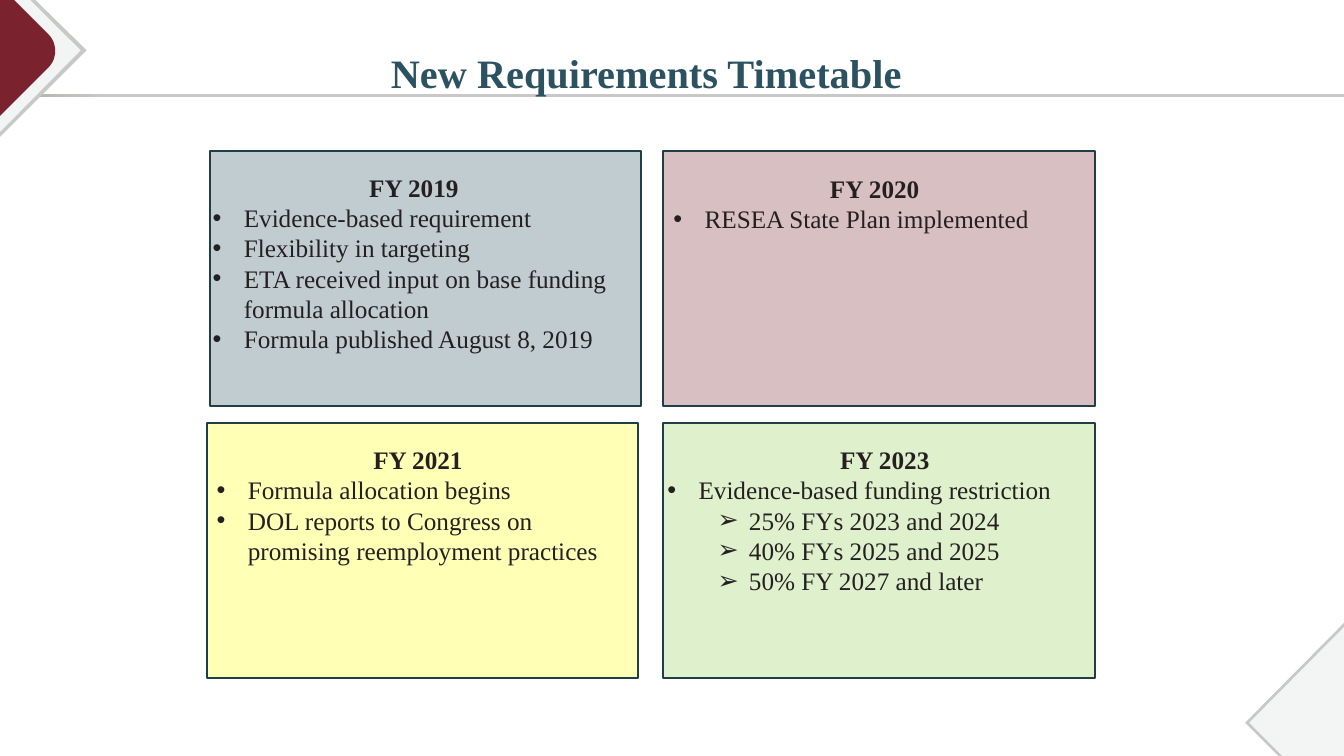
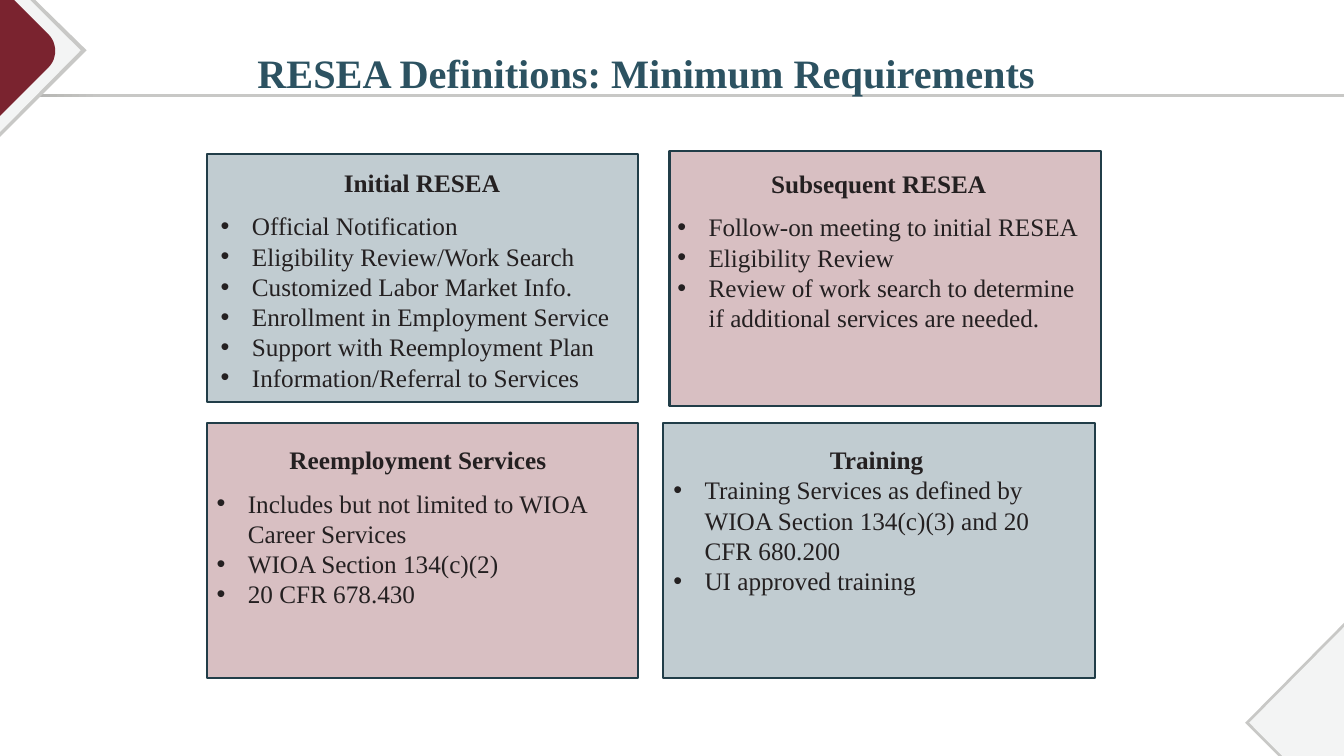
"""Build two slides of four cards each on a shared frame."""
from dataclasses import dataclass

from lxml.etree import SubElement
from pptx import Presentation
from pptx.dml.color import RGBColor
from pptx.enum.shapes import MSO_SHAPE
from pptx.enum.text import MSO_ANCHOR, PP_ALIGN
from pptx.oxml.ns import qn
from pptx.util import Inches, Pt


@dataclass(frozen=True)
class Theme:
    font: str = "Times New Roman"
    teal: str = "2C5261"
    wine: str = "7A232F"
    yellow: str = "FFFF00"
    green: str = "92D050"
    edge: str = "213D48"
    ink: str = "242021"
    grey: str = "C8C8C6"
    dark: str = "ABABA8"
    pale: str = "F3F4F4"
    head: float = 28.8
    body: float = 18
    gap: float = 9.5
    rule: float = 1.5
    tint: int = 29


@dataclass(frozen=True)
class Card:
    hue: str
    head: str
    items: tuple
    text: tuple
    shift: tuple = (0, 0)
    high: float = 2.53
    wide: float = 4.19
    gap: float = 0


LOOK = Theme()
WIDE, HIGH = 13.33, 7.5
COLS, ROWS = (2.05, 6.58), (1.5, 4.2)
CARD = 4.28
HANG = 0.31


def curve(a, b, c, d, steps=12):
    return [tuple((1 - t) ** 3 * p + 3 * (1 - t) ** 2 * t * q
                  + 3 * (1 - t) * t * t * r + t ** 3 * s
                  for p, q, r, s in zip(a, b, c, d))
            for t in (i / steps for i in range(steps + 1))]


PLATES = (
    (LOOK.grey, [(WIDE, 6.18), (WIDE, HIGH), (12.68, HIGH), (12.35, 7.17)]),
    (LOOK.pale, [(WIDE, 6.22), (WIDE, HIGH), (12.72, HIGH), (12.39, 7.17)]),
    (LOOK.grey, [(0, 0), (0.35, 0), (0.86, 0.5), (0, 1.36)]),
    (LOOK.pale, [(0, 0), (0.3, 0), (0.8, 0.5), (0, 1.31)]),
    (LOOK.wine, [(0, 0), (0.14, 0)]
     + curve((0.48, 0.34), (0.57, 0.43), (0.57, 0.58), (0.48, 0.67))
     + [(0, 1.15)]),
)

TIMES = (
    Card(LOOK.teal, "FY 2019", (
        "Evidence-based requirement",
        "Flexibility in targeting",
        "ETA received input on base funding formula allocation",
        "Formula published August 8, 2019"), (-0.04, 0.16), (0.03, 0)),
    Card(LOOK.wine, "FY 2020", ("RESEA State Plan implemented",), (0, 0.17)),
    Card(LOOK.yellow, "FY 2021", (
        "Formula allocation begins",
        "DOL reports to Congress on promising reemployment practices"),
        (0, 0.16)),
    Card(LOOK.green, "FY 2023", (
        "Evidence-based funding restriction",
        ("25% FYs 2023 and 2024",
         "40% FYs 2025 and 2025",
         "50% FY 2027 and later")), (-0.06, 0.16), wide=4.51),
)

TERMS = (
    Card(LOOK.teal, "Initial RESEA", (
        "Official Notification",
        "Eligibility Review/Work Search",
        "Customized Labor Market Info.",
        "Enrollment in Employment Service",
        "Support with Reemployment Plan",
        "Information/Referral to Services"),
        (0.04, 0.11), (0, 0.03), 2.46, gap=LOOK.gap),
    Card(LOOK.wine, "Subsequent RESEA", (
        "Follow-on meeting to initial RESEA",
        "Eligibility Review",
        "Review of work search to determine if additional services "
        "are needed."), (0.04, 0.12), (0.06, 0), gap=LOOK.gap),
    Card(LOOK.wine, "Reemployment Services", (
        "Includes but not limited to WIOA Career Services",
        "WIOA Section 134(c)(2)",
        "20 CFR 678.430"), (0, 0.16), gap=LOOK.gap),
    Card(LOOK.teal, "Training", (
        "Training Services as defined by WIOA Section 134(c)(3) "
        "and 20 CFR 680.200",
        "UI approved training"), (0, 0.16), wide=4.23),
)


def color(code):
    return RGBColor.from_string(code)


def paint(shape, hue):
    shape.shadow.inherit = False
    shape.fill.solid()
    shape.fill.fore_color.rgb = color(hue)
    shape.line.fill.background()


def block(slide, x, y, w, h):
    return slide.shapes.add_shape(
        MSO_SHAPE.RECTANGLE, *map(Inches, (x, y, w, h)))


def plate(slide, hue, points):
    first, *rest = [tuple(map(Inches, point)) for point in points]
    form = slide.shapes.build_freeform(*first)
    form.add_line_segments(rest, close=True)
    paint(form.convert_to_shape(), hue)


def band(slide):
    bar = block(slide, 0, 0.93, WIDE, 0.03)
    paint(bar, LOOK.grey)
    bar.fill.gradient()
    bar.fill.gradient_angle = 0
    stops = zip(bar.fill.gradient_stops, (0, 0.08), (LOOK.dark, LOOK.grey))
    for stop, place, hue in stops:
        stop.position = place
        stop.color.rgb = color(hue)


def write(para, words, size, hue, bold=False):
    run = para.add_run()
    run.text = words
    run.font.name = LOOK.font
    run.font.size = Pt(size)
    run.font.bold = bold
    run.font.color.rgb = color(hue)


def frame(slide, x, y, w, h):
    body = slide.shapes.add_textbox(*map(Inches, (x, y, w, h))).text_frame
    body.word_wrap = True
    return body


def title(slide, words):
    body = frame(slide, 2.01, 0.49, 8.7, 0.52)
    body.margin_left = Inches(0.2)
    body.vertical_anchor = MSO_ANCHOR.MIDDLE
    para = body.paragraphs[0]
    para.alignment = PP_ALIGN.CENTER
    para.line_spacing = 0.9
    write(para, words, LOOK.head, LOOK.teal, True)


def bullet(body, words, level=0):
    para = body.add_paragraph()
    para.level = level
    props = para._p.get_or_add_pPr()
    props.set("marL", str(Inches(HANG + level / 2)))
    props.set("indent", str(-Inches(HANG)))
    SubElement(props, qn("a:buFont"), typeface="Arial")
    SubElement(props, qn("a:buChar"), char="•➢"[level])
    write(para, words, LOOK.body, LOOK.ink)
    return para


def panel(slide, card, x, y):
    dx, dy = card.shift
    box = block(slide, x + dx, y + dy, CARD, card.high)
    paint(box, card.hue)
    fill = box.fill._xPr.find(qn("a:solidFill"))[0]
    SubElement(fill, qn("a:alpha"), val=str(LOOK.tint * 1000))
    box.line.color.rgb = color(LOOK.edge)
    box.line.width = Pt(LOOK.rule)

    dx, dy = card.text
    body = frame(slide, x + dx, y + dy, card.wide, card.high - dy)
    head = body.paragraphs[0]
    head.alignment = PP_ALIGN.CENTER
    head.space_after = Pt(card.gap)
    write(head, card.head, LOOK.body, LOOK.ink, True)
    for item in card.items:
        if isinstance(item, str):
            bullet(body, item)
        else:
            for words in item:
                bullet(body, words, 1)


def page(deck, words, cards):
    slide = deck.slides.add_slide(deck.slide_layouts[6])
    for hue, points in PLATES[:2]:
        plate(slide, hue, points)
    band(slide)
    for hue, points in PLATES[2:]:
        plate(slide, hue, points)
    title(slide, words)
    for i, card in enumerate(cards):
        panel(slide, card, COLS[i % 2], ROWS[i // 2])


def main():
    deck = Presentation()
    deck.slide_width, deck.slide_height = Inches(WIDE), Inches(HIGH)
    page(deck, "New Requirements Timetable", TIMES)
    page(deck, "RESEA Definitions: Minimum Requirements", TERMS)
    deck.save("out.pptx")


if __name__ == "__main__":
    main()
